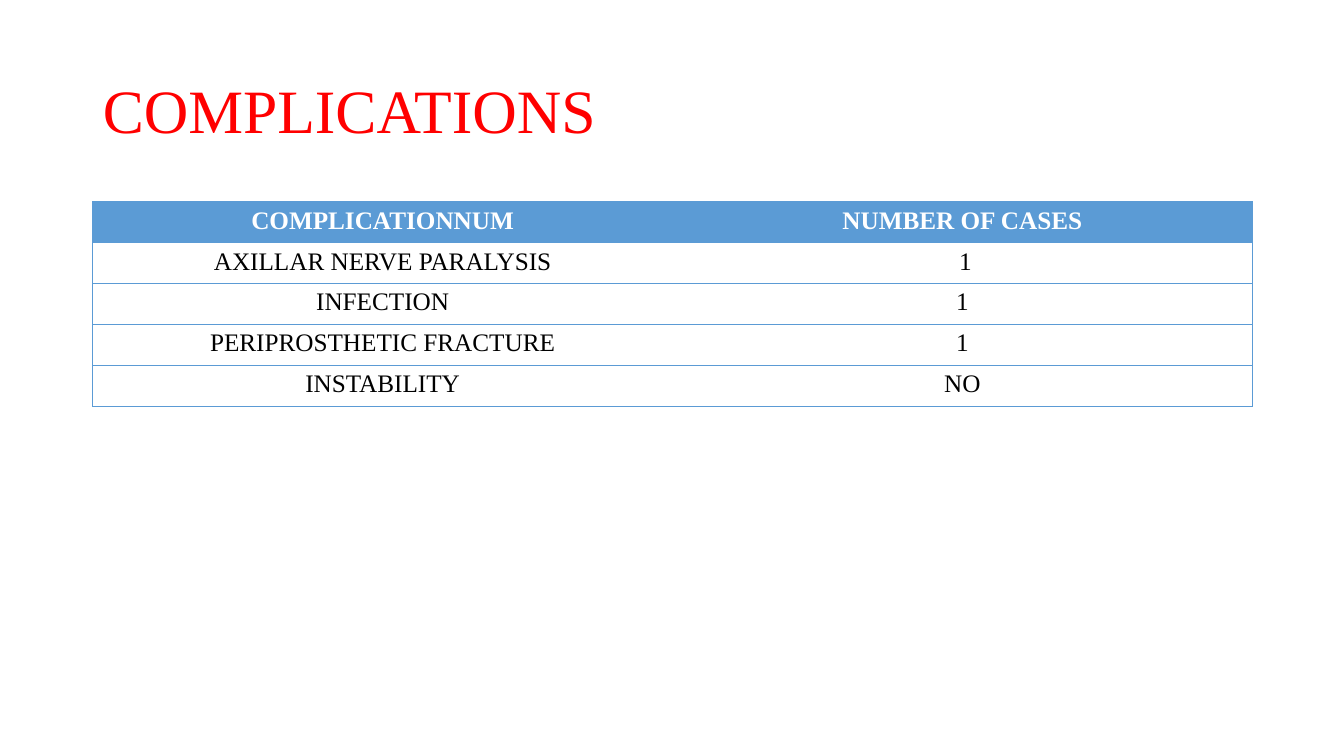
import pptx
import pptx.dml.color
import pptx.enum.text
import pptx.oxml
import pptx.oxml.ns
import pptx.util

Inches = pptx.util.Inches
FONT = "Times New Roman"
BLUE = "5B9BD5"
ROWS = [
    ("COMPLICATIONNUM", "NUMBER OF CASES"),
    ("AXILLAR NERVE PARALYSIS", " 1"),
    ("INFECTION", "1"),
    ("PERIPROSTHETIC FRACTURE", "1"),
    ("INSTABILITY", "NO"),
]


def rgb(value):
    return pptx.dml.color.RGBColor.from_string(value)


def add_run(p, text, size, color, bold=False):
    r = p.add_run()
    r.text = text
    r.font.name = FONT
    r.font.size = pptx.util.Pt(size)
    r.font.bold = bold
    r.font.color.rgb = rgb(color)


def set_borders(cell, sides):
    tc_pr = cell._tc.get_or_add_tcPr()
    for i, side in enumerate("LRTB"):
        fill = f'<a:solidFill><a:srgbClr val="{BLUE}"/></a:solidFill>' if side in sides else "<a:noFill/>"
        tc_pr.insert(i, pptx.oxml.parse_xml(
            f'<a:ln{side} {pptx.oxml.ns.nsdecls("a")} w="6350">{fill}</a:ln{side}>'))


def add_title(s, x, y, w, h):
    sp = s.shapes.title
    sp.left, sp.top, sp.width, sp.height = map(Inches, (x, y, w, h))
    tf = sp.text_frame
    tf.word_wrap = True
    tf.vertical_anchor = pptx.enum.text.MSO_ANCHOR.MIDDLE
    p = tf.paragraphs[0]
    p.alignment = pptx.enum.text.PP_ALIGN.LEFT
    p.line_spacing = 0.9
    add_run(p, "COMPLICATIONS", 44, "FF0000")


def add_complications(s, x, y, w, h):
    columns = len(ROWS[0])
    table = s.shapes.add_table(len(ROWS), columns, *map(Inches, (x, y, w, h))).table
    table.horz_banding = False
    for i, row in enumerate(ROWS):
        for j, text in enumerate(row):
            cell = table.cell(i, j)
            header = i == 0
            if header:
                cell.fill.solid()
                cell.fill.fore_color.rgb = rgb(BLUE)
            else:
                cell.fill.background()
            set_borders(cell, "TB" + ("L" if j == 0 else "") + ("R" if j == columns - 1 else ""))
            p = cell.text_frame.paragraphs[0]
            p.alignment = pptx.enum.text.PP_ALIGN.CENTER
            add_run(p, text, 18, "FFFFFF" if header else "000000", header)


def main():
    prs = pptx.Presentation()
    prs.slide_width, prs.slide_height = Inches(13.33), Inches(7.5)
    s = prs.slides.add_slide(prs.slide_layouts[5])
    add_title(s, 0.92, 0.4, 11.5, 1.45)
    add_complications(s, 0.92, 2, 11.5, 2.03)
    prs.save("out.pptx")


if __name__ == "__main__":
    main()
